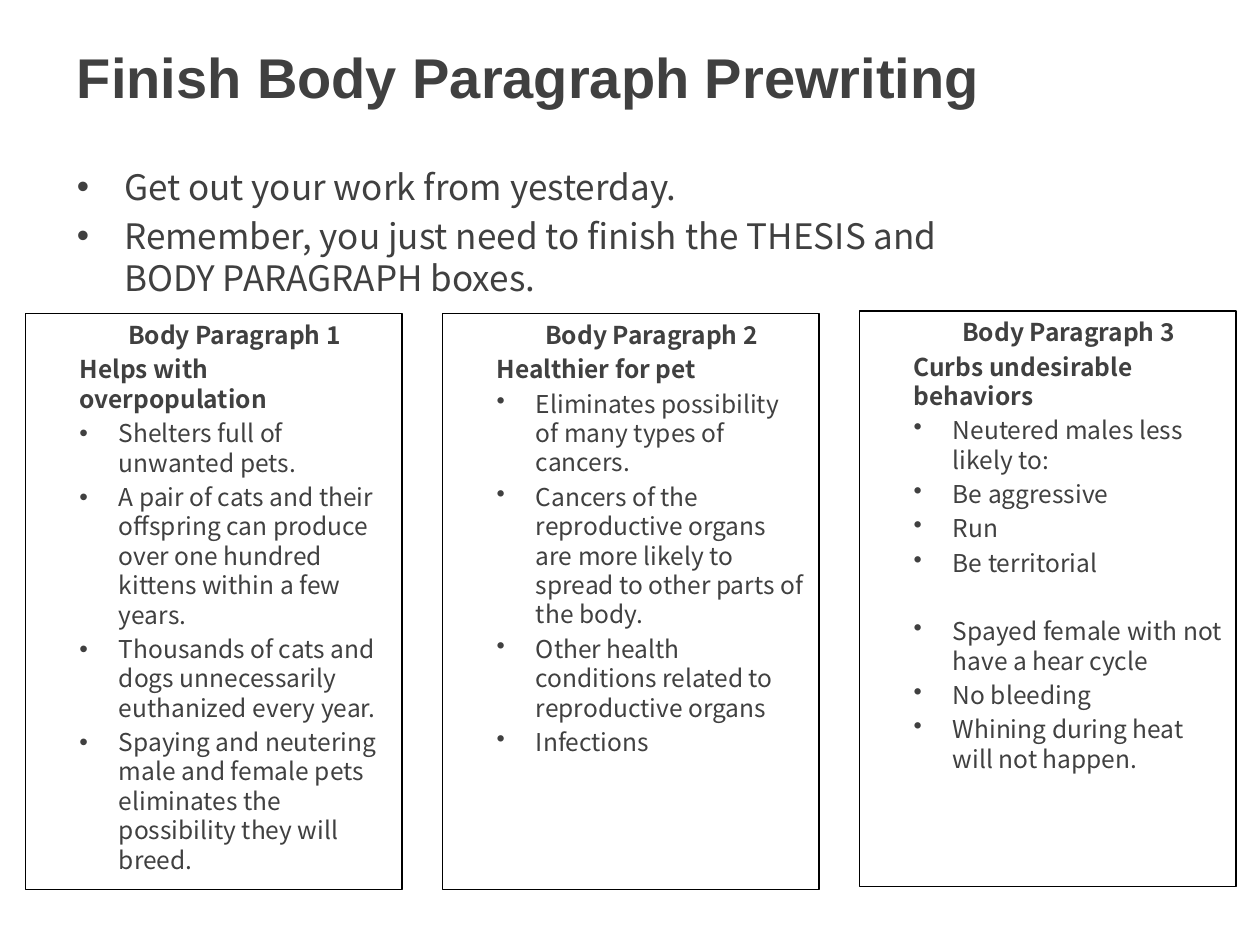
import pptx
import pptx.dml.color
import pptx.enum.shapes
import pptx.enum.text
import pptx.oxml
import pptx.oxml.ns
import pptx.util

Pt = pptx.util.Pt
ALIGN = pptx.enum.text.PP_ALIGN
ANCHOR = pptx.enum.text.MSO_ANCHOR

REMINDERS = [
    "Get out your work from yesterday.",
    "Remember, you just need to finish the THESIS and\vBODY PARAGRAPH boxes.",
]
COLUMNS = [
    ("Body Paragraph 1", "Helps with overpopulation", [
        "Shelters full of unwanted pets.",
        "A pair of cats and their offspring can produce over one hundred "
        "kittens within a few years.",
        "Thousands of cats and dogs unnecessarily euthanized every year.",
        "Spaying and neutering male and female pets eliminates the\v"
        "possibility they will breed.",
    ]),
    ("Body Paragraph 2", "Healthier for pet", [
        "Eliminates possibility of many types of cancers.",
        "Cancers of the reproductive organs are more likely to spread to "
        "other parts of the body.",
        "Other health conditions related to reproductive organs",
        "Infections",
    ]),
    ("Body Paragraph 3", "Curbs undesirable behaviors", [
        "Neutered males less likely to:",
        "Be aggressive",
        "Run",
        "Be territorial",
        "Spayed female with not have a hear cycle",
        "No bleeding",
        "Whining during heat\vwill not happen.",
    ]),
]
COLUMN_LEFT, COLUMN_STEP = 14.4, 238.3
COLUMN_TOPS = [179.3, 179.3, 177.8]
COLUMN_WIDTH, COLUMN_HEIGHT = 215.3, 329
GROUP_GAP = 22.4
GROUP_START = "Spayed female"


def color(value):
    return pptx.dml.color.RGBColor.from_string(value)


class Page:
    """The current slide and the style of its elements."""
    heading_font = "Arial"
    text_font = "Noto Sans CJK KR"
    ink = "404040"
    border = "000000"

    def __init__(self, deck):
        self.slide = deck.slides.add_slide(deck.slide_layouts[3])
        self.title_box, self.list_box, self.first_column = self.slide.placeholders

    def place(self, box, left, top, width, height, anchor):
        box.left, box.top = Pt(left), Pt(top)
        box.width, box.height = Pt(width), Pt(height)
        frame = box.text_frame
        frame.word_wrap = True
        frame.auto_size = pptx.enum.text.MSO_AUTO_SIZE.NONE
        frame.vertical_anchor = anchor

    def format(self, para, size, font, bold=False, align=ALIGN.LEFT, before=0):
        para.alignment = align
        para.space_before = Pt(before)
        for span in para.runs:
            span.font.name = font
            span.font.size = Pt(size)
            span.font.bold = bold
            span.font.color.rgb = color(self.ink)

    def bullet(self, para, indent):
        """Give a hanging bullet, or none when the indent is zero."""
        properties = para._p.get_or_add_pPr()
        properties.set("marL", str(Pt(indent)))
        properties.set("indent", str(-Pt(indent)))
        tag = "buChar" if indent else "buNone"
        mark = pptx.oxml.parse_xml(f"<a:{tag} {pptx.oxml.ns.nsdecls('a')}/>")
        if indent:
            mark.set("char", "•")
        properties.append(mark)

    def title(self, text):
        self.place(self.title_box, 36.7, 1.4, 647.3, 84.2, ANCHOR.MIDDLE)
        self.title_box.text_frame.text = text
        self.format(self.title_box.text_frame.paragraphs[0], 32,
                    self.heading_font, bold=True)

    def bullet_list(self, items):
        self.place(self.list_box, 36.7, 114.5, 648, 36, ANCHOR.MIDDLE)
        frame = self.list_box.text_frame
        frame.text = "\n".join(items)
        for index, para in enumerate(frame.paragraphs):
            self.bullet(para, 27)
            self.format(para, 20, self.text_font, before=4 if index else 0)

    def column(self, box, left, top, heading, claim, points):
        self.place(box, left, top, COLUMN_WIDTH, COLUMN_HEIGHT, ANCHOR.TOP)
        box.fill.background()
        box.line.color.rgb = color(self.border)
        box.line.width = Pt(0.75)
        frame = box.text_frame
        frame.margin_left, frame.margin_right = Pt(31), Pt(7.2)
        frame.margin_top = frame.margin_bottom = Pt(3.6)
        frame.text = "\n".join([heading, claim, *points])
        for index, para in enumerate(frame.paragraphs):
            self.bullet(para, 22.5 if index > 1 else 0)
            before = 2.8 if index else 0
            if para.text.startswith(GROUP_START):
                before = GROUP_GAP
            self.format(para, 14, self.text_font, bold=index < 2,
                        align=ALIGN.LEFT if index else ALIGN.CENTER,
                        before=before)

    def rectangle(self):
        shape = self.slide.shapes.add_shape(
            pptx.enum.shapes.MSO_SHAPE.RECTANGLE, 0, 0, Pt(1), Pt(1))
        shape.shadow.inherit = False
        return shape


def main():
    deck = pptx.Presentation()
    deck.slide_width, deck.slide_height = Pt(720), Pt(540)
    page = Page(deck)
    page.title("Finish Body Paragraph Prewriting")
    page.bullet_list(REMINDERS)
    for index, (content, top) in enumerate(zip(COLUMNS, COLUMN_TOPS)):
        box = page.rectangle() if index else page.first_column
        page.column(box, COLUMN_LEFT + index * COLUMN_STEP, top, *content)
    deck.save("out.pptx")


if __name__ == "__main__":
    main()
